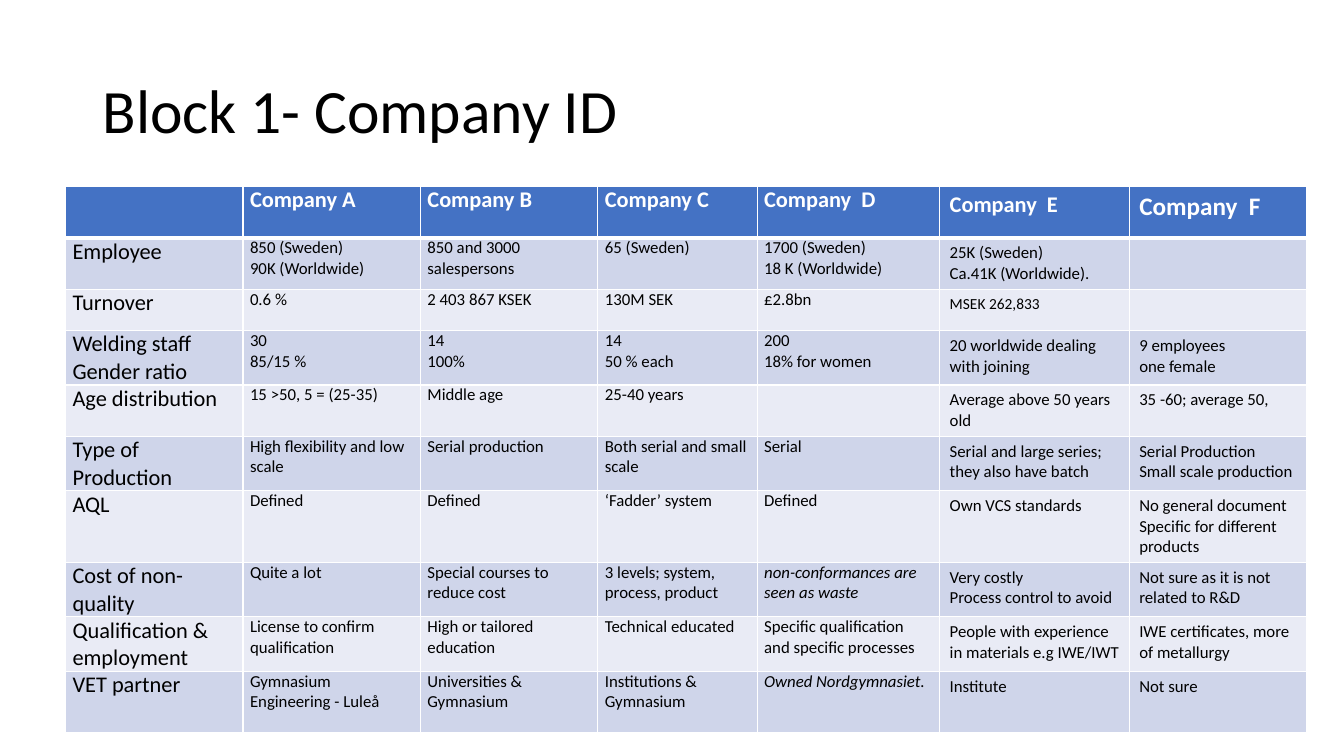
from dataclasses import dataclass

from lxml.etree import SubElement
from pptx import Presentation
from pptx.dml.color import RGBColor
from pptx.enum.text import MSO_ANCHOR
from pptx.oxml.ns import qn
from pptx.util import Inches, Pt


@dataclass(frozen=True)
class Theme:
    font: str = "Calibri"
    black: str = "000000"
    white: str = "FFFFFF"
    header: str = "4472C4"
    bands: tuple = ("CFD5EA", "E9EBF5")
    title_size: int = 44
    label_size: int = 16
    body_size: int = 12
    thin_border: int = 1
    thick_border: int = 3


THEME = Theme()
COLUMN_WIDTHS = (1.76, 1.76, 1.76, 1.58, 1.81, 1.88, 1.76)
ROW_HEIGHTS = (0.51, 0.51, 0.41, 0.54, 0.51, 0.54, 0.71, 0.54, 0.54, 0.61)
FIRST_PADDED_COLUMN = 5  # companies E and F have wider cell margins

COMPANY_ROWS = (
    ("", "Company A", "Company B", "Company C", "Company  D", "Company  E", "Company  F"),
    ("Employee", "850 (Sweden)\n90K (Worldwide)", "850 and 3000 salespersons",
     "65 (Sweden)", "1700 (Sweden)\n18 K (Worldwide)",
     "25K (Sweden)\nCa.41K (Worldwide).", ""),
    ("Turnover", "0.6 %", "2 403 867 KSEK", "130M SEK", "£2.8bn", "MSEK 262,833", ""),
    ("Welding staff\nGender ratio", "30\n85/15 %", "14\n100%", "14\n50 % each",
     "200\n18% for women", "20 worldwide dealing with joining",
     "9 employees\none female"),
    ("Age distribution", "15 >50, 5 = (25-35)", "Middle age", "25-40 years", "",
     "Average above 50 years old", "35 -60; average 50,"),
    ("Type of Production", "High flexibility and low scale", "Serial production",
     "Both serial and small scale", "Serial",
     "Serial and large series; they also have batch",
     "Serial Production\nSmall scale production"),
    ("AQL", "Defined", "Defined", "‘Fadder’ system", "Defined", "Own VCS standards",
     "No general document\nSpecific for different products"),
    ("Cost of non-quality", "Quite a lot", "Special courses to reduce cost",
     "3 levels; system, process, product", "non-conformances are seen as waste",
     "Very costly\nProcess control to avoid",
     "Not sure as it is not related to R&D"),
    ("Qualification & employment", "License to confirm qualification",
     "High or tailored education", "Technical educated",
     "Specific qualification and specific processes",
     "People with experience in materials e.g IWE/IWT",
     "IWE certificates, more of metallurgy"),
    ("VET partner", "Gymnasium\nEngineering - Luleå", "Universities & Gymnasium",
     "Institutions & Gymnasium", "Owned Nordgymnasiet.", "Institute", "Not sure"),
)
# Cells that differ from the usual style, keyed by (row, column)
SPECIAL_SIZES = {(0, 6): 18, (2, 5): 11}
ITALIC_CELLS = {(7, 4), (9, 4)}


def style_text(text_frame, size, color, bold=False, italic=False):
    for paragraph in text_frame.paragraphs:
        for run in paragraph.runs:
            run.font.name = THEME.font
            run.font.size = Pt(size)
            run.font.color.rgb = RGBColor.from_string(color)
            run.font.bold = bold
            run.font.italic = italic


def add_title(slide, text):
    shape = slide.shapes.add_textbox(Inches(0.92), Inches(0.4), Inches(11.5), Inches(1.45))
    text_frame = shape.text_frame
    text_frame.word_wrap = True
    text_frame.vertical_anchor = MSO_ANCHOR.MIDDLE
    text_frame.text = text
    text_frame.paragraphs[0].line_spacing = 0.9
    style_text(text_frame, THEME.title_size, THEME.black)


def set_borders(cell, row):
    widths = {"L": THEME.thin_border, "R": THEME.thin_border,
              "T": THEME.thick_border if row == 1 else THEME.thin_border,
              "B": THEME.thick_border if row == 0 else THEME.thin_border}
    properties = cell._tc.get_or_add_tcPr()
    for side, width in widths.items():
        line = SubElement(properties, qn(f"a:ln{side}"), w=str(Pt(width)))
        fill = SubElement(line, qn("a:solidFill"))
        SubElement(fill, qn("a:srgbClr"), val=THEME.white)


def fill_cell(cell, row, column, text):
    is_header = row == 0
    set_borders(cell, row)
    cell.fill.solid()
    color = THEME.header if is_header else THEME.bands[(row - 1) % 2]
    cell.fill.fore_color.rgb = RGBColor.from_string(color)
    if column < FIRST_PADDED_COLUMN:
        cell.margin_left = cell.margin_right = Inches(0.07)
        cell.margin_top = cell.margin_bottom = 0
    cell.text_frame.text = text
    usual_size = THEME.label_size if is_header or column == 0 else THEME.body_size
    style_text(cell.text_frame, SPECIAL_SIZES.get((row, column), usual_size),
               THEME.white if is_header else THEME.black,
               bold=is_header, italic=(row, column) in ITALIC_CELLS)


def add_company_table(slide):
    table = slide.shapes.add_table(
        len(ROW_HEIGHTS), len(COLUMN_WIDTHS), Inches(0.65), Inches(1.85),
        Inches(sum(COLUMN_WIDTHS)), Inches(sum(ROW_HEIGHTS))).table
    for column, width in zip(table.columns, COLUMN_WIDTHS):
        column.width = Inches(width)
    for table_row, height in zip(table.rows, ROW_HEIGHTS):
        table_row.height = Inches(height)
    for row, texts in enumerate(COMPANY_ROWS):
        for column, text in enumerate(texts):
            fill_cell(table.cell(row, column), row, column, text)


def main():
    presentation = Presentation()
    presentation.slide_width = Inches(13.33)
    presentation.slide_height = Inches(7.5)
    slide = presentation.slides.add_slide(presentation.slide_layouts[6])

    # Heading
    add_title(slide, "Block 1- Company ID")
    # Comparison of the six companies
    add_company_table(slide)

    presentation.save("out.pptx")


if __name__ == "__main__":
    main()
